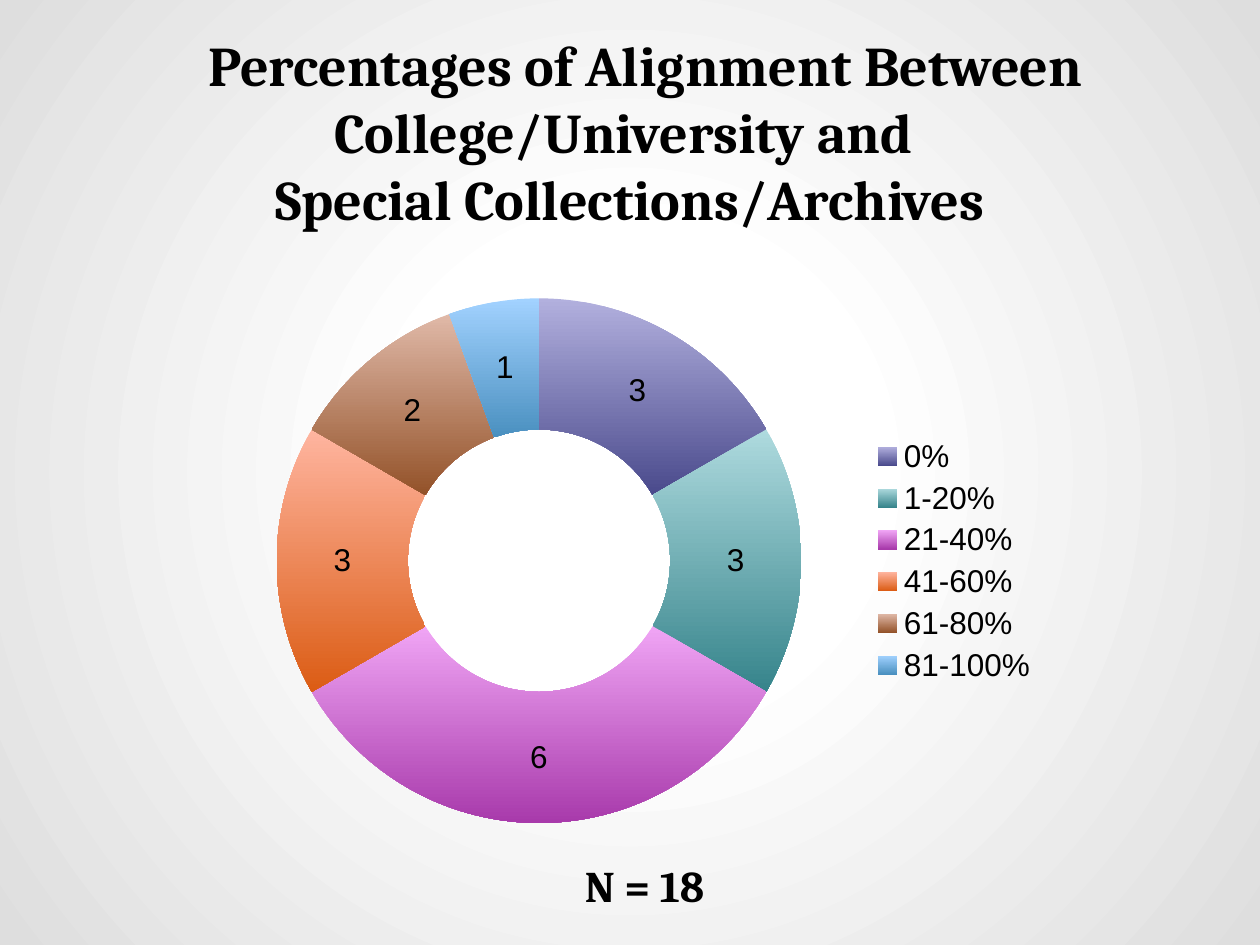
from lxml.etree import SubElement
from pptx import Presentation
from pptx.chart.data import CategoryChartData
from pptx.dml.color import RGBColor
from pptx.enum.chart import XL_CHART_TYPE, XL_LEGEND_POSITION
from pptx.enum.text import MSO_ANCHOR, MSO_AUTO_SIZE, PP_ALIGN
from pptx.oxml.ns import qn
from pptx.util import Inches, Pt

# Content
TITLE = ("Percentages of Alignment Between College/University and "
         "\vSpecial Collections/Archives")
SAMPLE_SIZE = "N = 18"
BLACK = RGBColor(0x00, 0x00, 0x00)
# Category, count, slice colour at the top and at the bottom
SLICES = [
    ("0%", 3, RGBColor(0xB2, 0xB0, 0xDE), RGBColor(0x4A, 0x4A, 0x8C)),
    ("1-20%", 3, RGBColor(0xAE, 0xDA, 0xDE), RGBColor(0x36, 0x84, 0x8B)),
    ("21-40%", 6, RGBColor(0xF0, 0xA5, 0xF5), RGBColor(0xA8, 0x3A, 0xAB)),
    ("41-60%", 3, RGBColor(0xFF, 0xB5, 0xA0), RGBColor(0xDB, 0x5C, 0x14)),
    ("61-80%", 2, RGBColor(0xE0, 0xB9, 0xA8), RGBColor(0x93, 0x52, 0x29)),
    ("81-100%", 1, RGBColor(0xA2, 0xD2, 0xFF), RGBColor(0x4A, 0x90, 0xC0)),
]
# Background stops: percent from the centre, colour
BACKDROP = [(0, "FFFFFF"), (30, "FFFFFF"), (100, "DEDEDE")]
HEADING_FONT = {"name": "Cambria", "bold": True}
CHART_FONT = {"name": "Arial", "size": Pt(18)}


def style_font(font, formats):
    for name, value in formats.items():
        setattr(font, name, value)
    font.color.rgb = BLACK


def add_heading(page, text, place, size, frame_format):
    box = page.shapes.add_textbox(*map(Inches, place))
    frame = box.text_frame
    for name, value in frame_format.items():
        setattr(frame, name, value)
    para = frame.paragraphs[0]
    para.text = text
    para.alignment = PP_ALIGN.CENTER
    for span in para.runs:
        style_font(span.font, {**HEADING_FONT, "size": Pt(size)})
    return para


def paint_backdrop(page):
    fill = page.background.fill
    fill.gradient()
    gradient = page.background._cSld.find(".//" + qn("a:gradFill"))
    for child in list(gradient):
        gradient.remove(child)
    stops = SubElement(gradient, qn("a:gsLst"))
    for percent, colour in BACKDROP:
        stop = SubElement(stops, qn("a:gs"), pos=str(percent * 1000))
        SubElement(stop, qn("a:srgbClr"), val=colour)
    circle = SubElement(gradient, qn("a:path"), path="circle")
    SubElement(circle, qn("a:fillToRect"),
               {side: "50000" for side in "ltrb"})


def add_doughnut(page):
    data = CategoryChartData()
    data.categories = [name for name, *_ in SLICES]
    data.add_series("Series 1", [count for _, count, *_ in SLICES])
    chart = page.shapes.add_chart(
        XL_CHART_TYPE.DOUGHNUT, *map(Inches, (1.67, 2.23, 6.67, 4.44)), data).chart
    style_font(chart.font, CHART_FONT)
    chart.has_title = False
    chart.has_legend = True
    chart.legend.position = XL_LEGEND_POSITION.RIGHT
    chart.legend.include_in_layout = False

    plot = chart.plots[0]
    plot.vary_by_categories = True
    plot.has_data_labels = True
    plot.data_labels.show_value = True
    plot.data_labels.show_percentage = False
    style_font(plot.data_labels.font, CHART_FONT)

    # Each slice shades from light at the top to dark at the bottom
    for index, (_, _, *shades) in enumerate(SLICES):
        style = plot.series[0].points[index].format
        style.fill.gradient()
        style.fill.gradient_angle = 270
        for stop, shade in zip(style.fill.gradient_stops, shades):
            stop.color.rgb = shade
        style.line.fill.background()


def main():
    deck = Presentation()
    deck.slide_width, deck.slide_height = Inches(10), Inches(7.5)
    page = deck.slides.add_slide(deck.slide_layouts[6])
    paint_backdrop(page)

    # Title, with its first line indented
    inset = Inches(0.1)
    title = add_heading(page, TITLE, (0.5, 0.69, 9, 1.25), 32, {
        "word_wrap": True, "vertical_anchor": MSO_ANCHOR.BOTTOM,
        "margin_left": inset, "margin_top": inset,
        "margin_right": inset, "margin_bottom": inset})
    title._p.get_or_add_pPr().set("indent", str(Inches(0.25)))

    add_doughnut(page)

    # Sample size below the chart
    add_heading(page, SAMPLE_SIZE, (4.33, 6.77, 1.57, 0.52), 25, {
        "word_wrap": True, "auto_size": MSO_AUTO_SIZE.SHAPE_TO_FIT_TEXT})
    deck.save("out.pptx")


if __name__ == "__main__":
    main()
